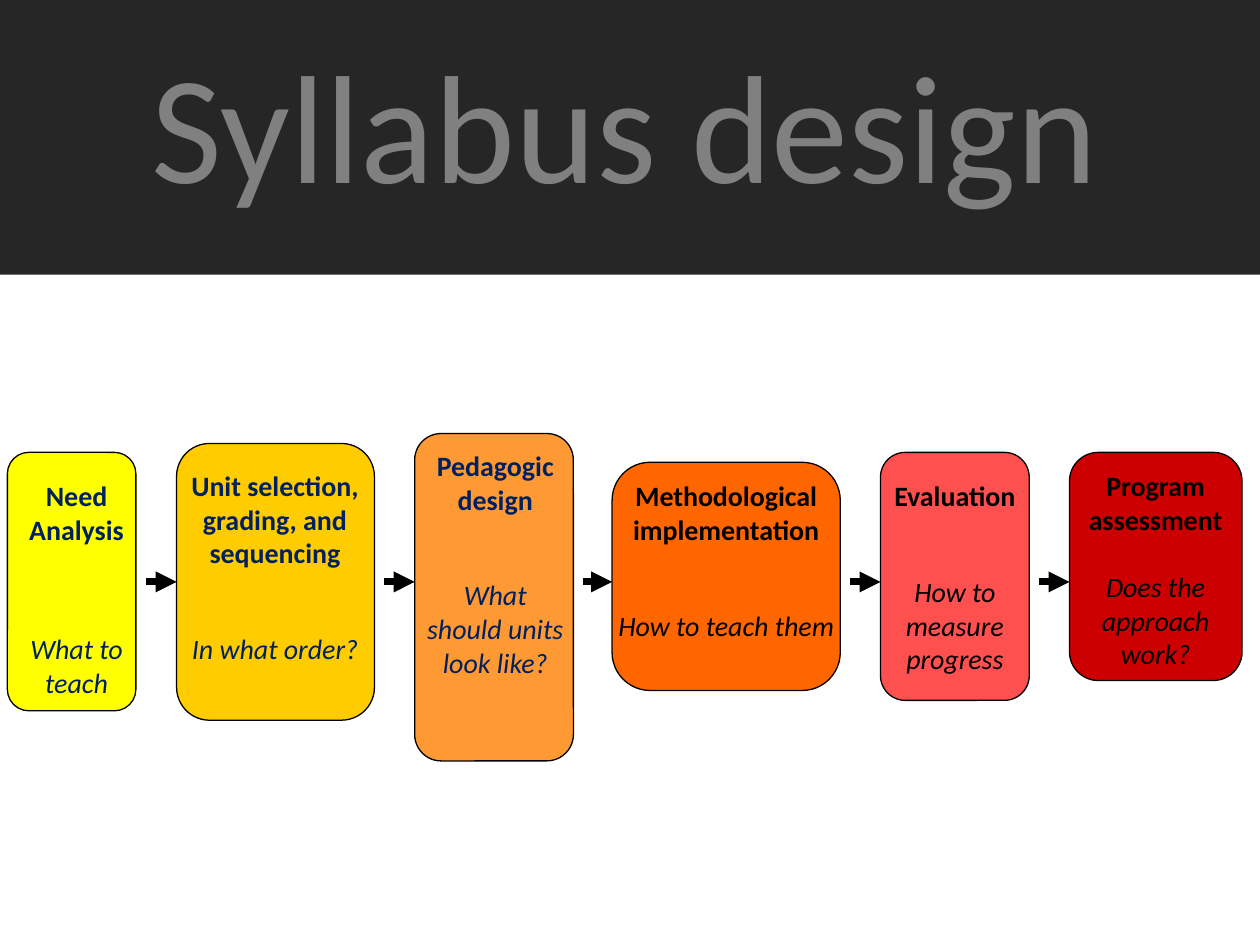
import pptx
import pptx.dml.color
import pptx.enum.shapes
import pptx.enum.text
import pptx.oxml
import pptx.oxml.ns
import pptx.util
from pptx.util import Cm

BLACK, NAVY = "000000", "002060"
ARROW_ROW = 11.73
ARROW_GAP = 0.2


def colour(hex_code):
    return pptx.dml.color.RGBColor.from_string(hex_code)


class SlideBuilder:
    font = "Calibri"
    body_size = 16

    def __init__(self, slide):
        self.slide = slide

    def block(self, kind, bounds, fill, outline=None):
        shape = self.slide.shapes.add_shape(kind, *map(Cm, bounds))
        shape.shadow.inherit = False
        shape.fill.solid()
        shape.fill.fore_color.rgb = colour(fill)
        if outline:
            shape.line.color.rgb = colour(outline)
            shape.line.width = pptx.util.Pt(0.75)
        else:
            shape.line.fill.background()
        return shape

    def text(self, bounds, lines, ink, size=body_size):
        """Add centred lines, each given as (words, bold, italic, space before)."""
        box = self.slide.shapes.add_textbox(*map(Cm, bounds))
        frame = box.text_frame
        frame.word_wrap = True
        frame.text = "\n".join(line[0] for line in lines)
        for paragraph, (_, bold, italic, gap) in zip(frame.paragraphs, lines):
            paragraph.alignment = pptx.enum.text.PP_ALIGN.CENTER
            paragraph.space_before = pptx.util.Pt(gap)
            font = paragraph.runs[0].font
            font.name, font.size = self.font, pptx.util.Pt(size)
            font.bold, font.italic = bold, italic
            font.color.rgb = colour(ink)
        return frame

    def arrow(self, start, end, row):
        line = self.slide.shapes.add_connector(
            pptx.enum.shapes.MSO_CONNECTOR.STRAIGHT,
            Cm(start), Cm(row), Cm(end), Cm(row))
        line.line.color.rgb = colour(BLACK)
        line.line.width = pptx.util.Pt(4)
        head = pptx.oxml.parse_xml(
            f'<a:tailEnd {pptx.oxml.ns.nsdecls("a")} type="triangle"/>')
        line.line._get_or_add_ln().append(head)
        line._element.spPr.append(pptx.oxml.parse_xml(
            f'<a:effectLst {pptx.oxml.ns.nsdecls("a")}/>'))
        return line


# Stage: heading, question, gap between them (pt), ink, fill, box, text box (cm)
STAGES = [
    ("Need Analysis", "What to teach", 49, NAVY, "FFFF00",
     (0.15, 9.12, 2.59, 5.21), (0.15, 9.53, 2.79, 5.89)),
    ("Unit selection, grading, and sequencing", "In what order?", 35.5, NAVY, "FFCC00",
     (3.56, 8.94, 3.99, 5.58), (3.35, 9.32, 4.39, 4.32)),
    ("Pedagogic design", "What should units look like?", 35.5, NAVY, "FF9933",
     (8.36, 8.74, 3.2, 6.6), (8.36, 8.92, 3.25, 6.76)),
    ("Methodological implementation", "How to teach them", 35.5, BLACK, "FF6600",
     (12.34, 9.32, 4.6, 4.6), (12.14, 9.53, 5, 4.7)),
    ("Evaluation", "How to measure progress", 35.5, BLACK, "FF5050",
     (17.75, 9.12, 3, 5), (17.55, 9.53, 3.4, 4.32)),
    ("Program assessment", "Does the approach work?", 19.5, BLACK, "CC0000",
     (21.56, 9.12, 3.48, 4.6), (21.54, 9.32, 3.51, 4.37)),
]


def main():
    deck = pptx.Presentation()
    deck.slide_width, deck.slide_height = Cm(25.4), Cm(19.05)
    builder = SlideBuilder(deck.slides.add_slide(deck.slide_layouts[6]))
    shapes = pptx.enum.shapes.MSO_SHAPE

    # Title band
    builder.block(shapes.RECTANGLE, (0, -0.05, 25.43, 5.59), "262626")
    title = builder.text((1.8, 0.86, 21.59, 3.18),
                         [("Syllabus design", False, False, 0)], "808080", 88)
    title.vertical_anchor = pptx.enum.text.MSO_ANCHOR.MIDDLE

    # Stages, each with an arrow from the one before
    previous_right = None
    for heading, question, gap, ink, fill, bounds, text_bounds in STAGES:
        stage = builder.block(shapes.ROUNDED_RECTANGLE, bounds, fill, BLACK)
        builder.text(text_bounds, [(heading, True, False, 0),
                                   (question, False, True, gap)], ink)
        left, top, width, height = bounds
        if previous_right is not None:
            arrow = builder.arrow(previous_right + ARROW_GAP, left, ARROW_ROW)
            if abs(top + height / 2 - ARROW_ROW) < 0.01:
                arrow.end_connect(stage, 1)
        previous_right = left + width

    deck.save("out.pptx")


if __name__ == "__main__":
    main()
